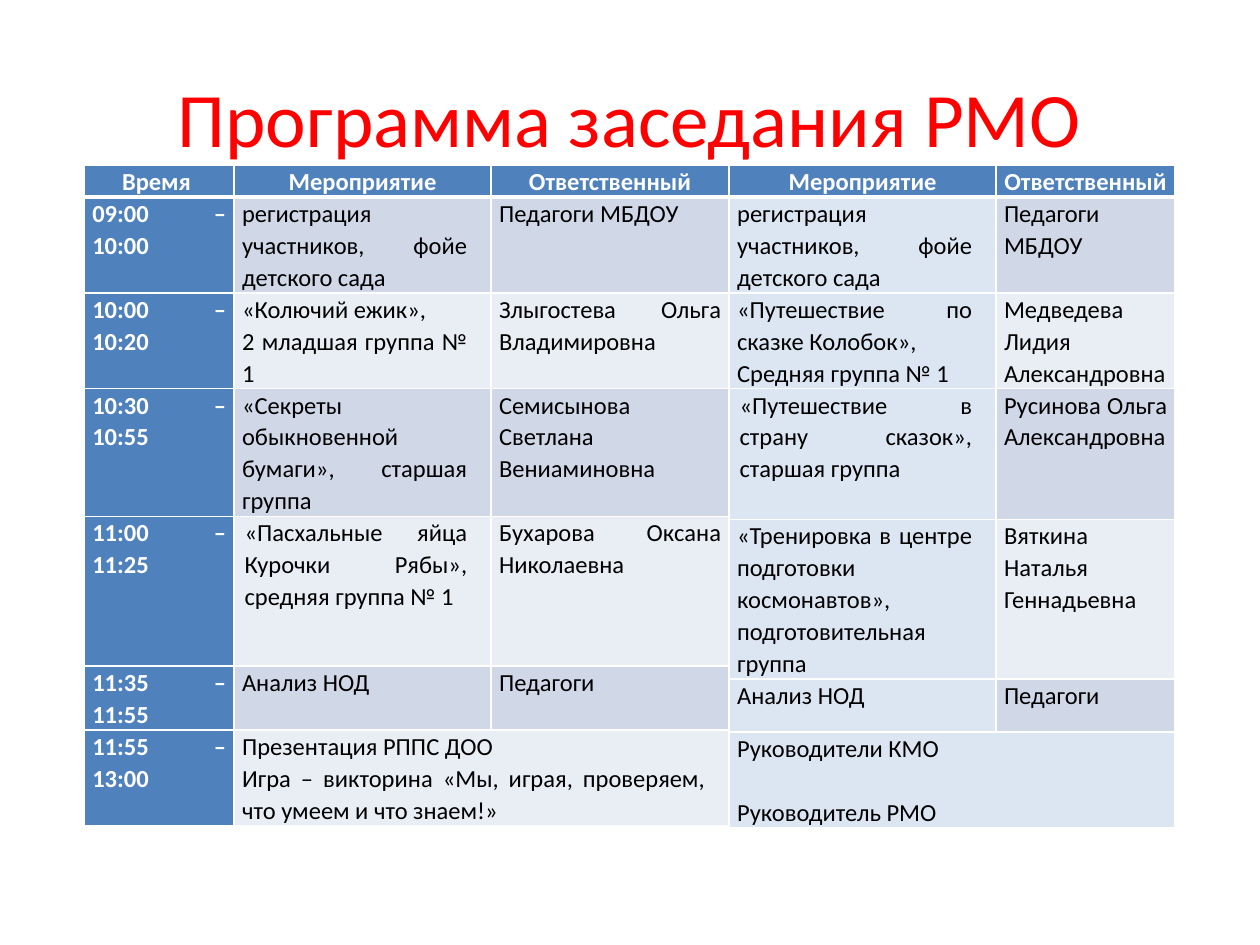
from lxml import etree
from pptx import Presentation, util as u
from pptx.dml.color import RGBColor
from pptx.enum import text
from pptx.oxml.ns import qn

HEADER, DARK, LIGHT, PALE = "4F81BD", "D0D8E8", "E9EDF4", "DCE6F2"
WHITE, BLACK, RED = "FFFFFF", "000000", "FF0000"

LEFT_ROWS = [
    ["Время ", "Мероприятие", "Ответственный"],
    ["09:00 – 10:00", "регистрация участников, фойе детского сада", "Педагоги МБДОУ"],
    ["10:00 – 10:20", "«Колючий ежик», \n2 младшая группа № 1 ", "Злыгостева Ольга Владимировна"],
    ["10:30 – 10:55", "«Секреты обыкновенной бумаги», старшая группа", "Семисынова Светлана Вениаминовна"],
    ["11:00 – 11:25", "«Пасхальные яйца Курочки Рябы», средняя группа № 1", "Бухарова Оксана Николаевна"],
    ["11:35 – 11:55", "Анализ НОД", "Педагоги"],
    ["11:55 – 13:00", "Презентация РППС ДОО\nИгра – викторина «Мы, играя, проверяем, что умеем и что знаем!»"],
]
RIGHT_ROWS = [
    ["Мероприятие", "Ответственный"],
    ["регистрация участников, фойе детского сада", "Педагоги МБДОУ"],
    ["«Путешествие по сказке Колобок», \nСредняя группа № 1 ", "Медведева Лидия Александровна"],
    ["«Путешествие в страну сказок», старшая группа ", "Русинова Ольга Александровна"],
    ["«Тренировка в центре подготовки космонавтов», подготовительная группа", "Вяткина Наталья Геннадьевна"],
    ["Анализ НОД", "Педагоги"],
    ["Руководители КМО\nРуководитель РМО"],
]


def color(value):
    """Turn a hex string into a colour."""
    return RGBColor.from_string(value)


def apply(target, values):
    """Set every attribute named in a dict."""
    for name, value in values.items():
        setattr(target, name, value)


class ProgrammeSlide:
    """Hold the style and the current slide."""

    font_name = "Calibri"
    cell_format = {"margin_left": u.Cm(0.16), "margin_right": u.Cm(0.16), "margin_top": 0, "margin_bottom": 0}

    def __init__(self, presentation):
        """Add a title-only slide."""
        self.slide = presentation.slides.add_slide(presentation.slide_layouts[5])

    def style_font(self, font, size, value, bold=False):
        """Format a font."""
        apply(font, {"name": self.font_name, "size": u.Pt(size), "bold": bold})
        font.color.rgb = color(value)

    def title(self, words):
        """Place and format the title."""
        shape = self.slide.shapes.title
        apply(shape, {"left": u.Cm(1.27), "top": u.Cm(0.76), "width": u.Cm(22.86), "height": u.Cm(3.18)})
        frame = shape.text_frame
        frame.text = words
        apply(frame, {"vertical_anchor": text.MSO_ANCHOR.MIDDLE, "word_wrap": True})
        paragraph = frame.paragraphs[0]
        paragraph.alignment = text.PP_ALIGN.CENTER
        self.style_font(paragraph.runs[0].font, 44, RED)

    def borders(self, cell, top, bottom):
        """Draw white cell borders."""
        properties = cell._tc.get_or_add_tcPr()
        for side, width in {"lnL": 1, "lnR": 1, "lnT": top, "lnB": bottom}.items():
            line = etree.SubElement(properties, qn(f"a:{side}"), w=str(u.Pt(width)))
            fill = etree.SubElement(line, qn("a:solidFill"))
            etree.SubElement(fill, qn("a:srgbClr"), val=WHITE)

    def cell(self, cell, words, fill, header=False, bold=False, indent=0, right=0, gap=0):
        """Fill and format one cell."""
        apply(cell, self.cell_format)
        cell.fill.solid()
        cell.fill.fore_color.rgb = color(fill)
        cell.text = words
        for index, paragraph in enumerate(cell.text_frame.paragraphs):
            alignment = text.PP_ALIGN.CENTER if header else text.PP_ALIGN.JUSTIFY
            apply(paragraph, {"alignment": alignment, "line_spacing": 1.07})
            if index:
                paragraph.space_before = u.Pt(gap)
            properties = paragraph._p.get_or_add_pPr()
            properties.set("marL", str(u.Cm(indent)))
            properties.set("marR", str(u.Cm(right)))
            for run in paragraph.runs:
                self.style_font(run.font, 14, WHITE if bold else BLACK, bold)

    def table(self, left, widths, heights, rows, event, event_fill=None, indented=None, gap=0):
        """Add a programme table whose event column is given by index."""
        frame = self.slide.shapes.add_table(
            len(rows), len(widths), u.Cm(left), u.Cm(3.33), u.Cm(sum(widths)), u.Cm(sum(heights)))
        table = frame.table
        for column, width in zip(table.columns, widths):
            column.width = u.Cm(width)
        for row, height in zip(table.rows, heights):
            row.height = u.Cm(height)
        for y, row in enumerate(rows):
            header = y == 0
            for x in range(len(widths)):
                self.borders(table.cell(y, x), 3 if y == 1 else 1, 3 if header else 1)
            if len(row) < len(widths):
                table.cell(y, event).merge(table.cell(y, event + 1))
            for x, words in enumerate(row):
                is_event = x == event and not header
                fill = DARK if y % 2 else LIGHT
                if header or x < event:
                    fill = HEADER
                elif is_event and event_fill:
                    fill = event_fill
                self.cell(table.cell(y, x), words, fill, header, header or x < event,
                          indent=0.05 if is_event and y == indented else 0,
                          right=0.32 if is_event else 0, gap=gap if y == len(rows) - 1 else 0)


def main():
    """Build and save the slide."""
    presentation = Presentation()
    apply(presentation, {"slide_width": u.Cm(25.4), "slide_height": u.Cm(19.05)})
    programme = ProgrammeSlide(presentation)
    programme.title("Программа заседания РМО")
    programme.table(1.7, [3.02, 5.18, 4.8], [0.58, 1.14, 1.14, 1.73, 3.02, 0.58, 1.73],
                    LEFT_ROWS, event=1, indented=4)
    programme.table(14.7, [5.38, 3.61], [0.61, 1.02, 1.52, 2.64, 2.92, 1.07, 1.88],
                    RIGHT_ROWS, event=0, event_fill=PALE, indented=3, gap=18.3)
    presentation.save("out.pptx")


if __name__ == "__main__":
    main()
